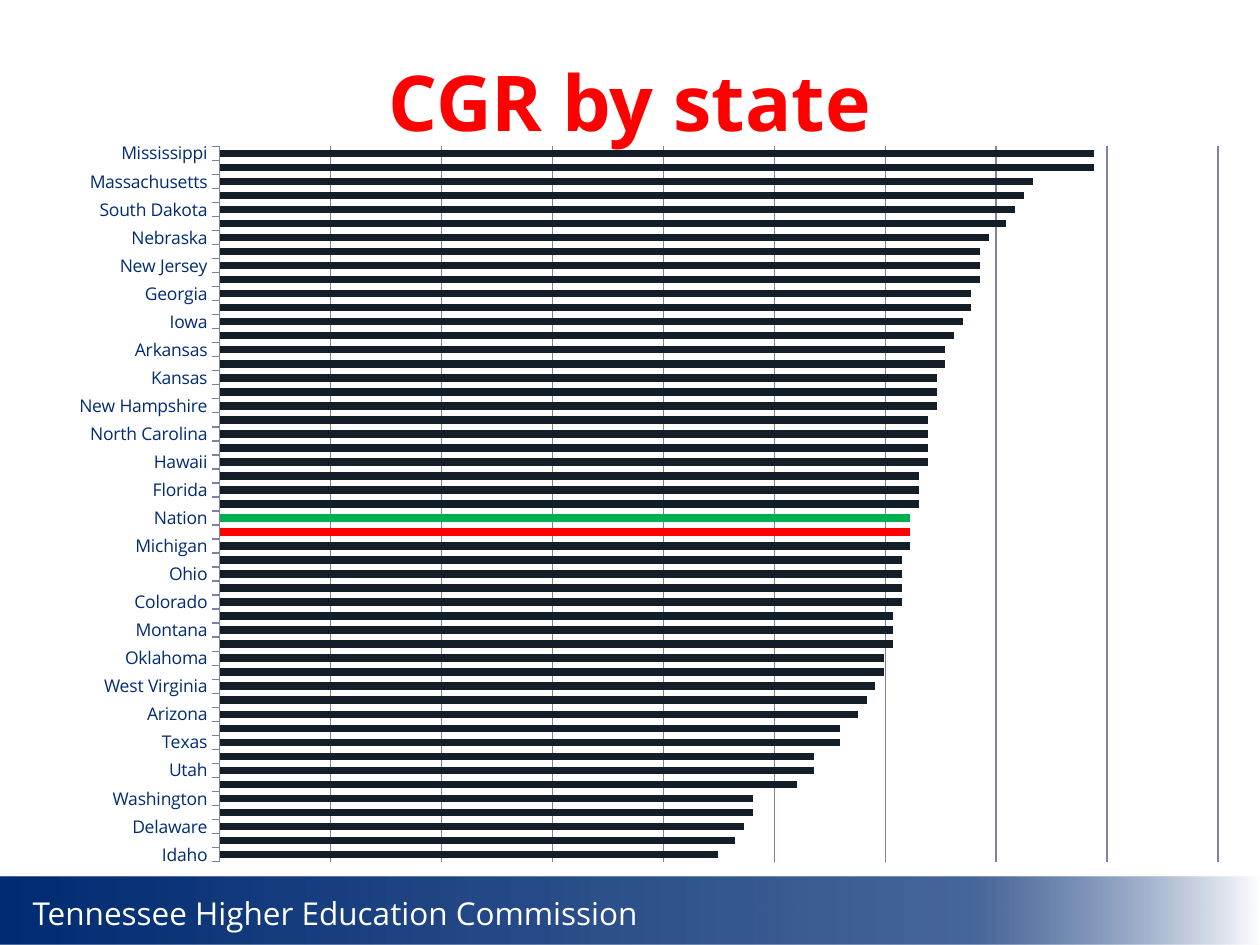
from lxml import etree
from pptx import Presentation
from pptx.chart.data import CategoryChartData
from pptx.dml.color import RGBColor
from pptx.enum.chart import XL_CHART_TYPE, XL_TICK_MARK
from pptx.enum.shapes import MSO_SHAPE
from pptx.enum.text import MSO_ANCHOR, MSO_AUTO_SIZE, PP_ALIGN
from pptx.oxml import parse_xml
from pptx.util import Inches, Pt

BARS = XL_CHART_TYPE.BAR_CLUSTERED
TICK_OUT, TICK_NONE = XL_TICK_MARK.OUTSIDE, XL_TICK_MARK.NONE
RECTANGLE = MSO_SHAPE.RECTANGLE
MIDDLE = MSO_ANCHOR.MIDDLE
FIT_SHAPE = MSO_AUTO_SIZE.SHAPE_TO_FIT_TEXT
LEFT, CENTER = PP_ALIGN.LEFT, PP_ALIGN.CENTER

NAVY = RGBColor(0x00, 0x2C, 0x73)
WHITE = RGBColor(0xFF, 0xFF, 0xFF)
RED = RGBColor(0xFF, 0x00, 0x00)
GREEN = RGBColor(0x00, 0xB0, 0x50)
INK = RGBColor(0x13, 0x1E, 0x29)
GRID = RGBColor(0x80, 0x80, 0xA0)
FONT = "Open Sans"

A_NS = "http://schemas.openxmlformats.org/drawingml/2006/main"
C_NS = "http://schemas.openxmlformats.org/drawingml/2006/chart"

WIDTH, HEIGHT = Inches(10), Inches(7.5)
GRID_STEPS = 9
AXIS_MAX = 114.2
PLOT_AREA = {"x": 0.156, "y": 0.04, "w": 0.827, "h": 0.946}
HIGHLIGHTS = {"Nation": GREEN, "Tennessee": RED}
RATES = [
    ("Mississippi", 100), ("Connecticut", 100), ("Massachusetts", 93),
    ("New Mexico", 92), ("South Dakota", 91), ("Minnesota", 90),
    ("Nebraska", 88), ("New York", 87), ("New Jersey", 87),
    ("South Carolina", 87), ("Georgia", 86), ("North Dakota", 86),
    ("Iowa", 85), ("Indiana", 84), ("Arkansas", 83), ("Rhode Island", 83),
    ("Kansas", 82), ("Louisiana", 82), ("New Hampshire", 82),
    ("Maryland", 81), ("North Carolina", 81), ("Virginia", 81),
    ("Hawaii", 81), ("Alabama", 80), ("Florida", 80), ("Kentucky", 80),
    ("Nation", 79), ("Tennessee", 79), ("Michigan", 79), ("California", 78),
    ("Ohio", 78), ("Missouri", 78), ("Colorado", 78), ("Pennsylvania", 77),
    ("Montana", 77), ("Wyoming", 77), ("Oklahoma", 76), ("Wisconsin", 76),
    ("West Virginia", 75), ("Illinois", 74), ("Arizona", 73), ("Maine", 71),
    ("Texas", 71), ("Vermont", 68), ("Utah", 68), ("Nevada", 66),
    ("Washington", 61), ("Oregon", 61), ("Delaware", 60), ("Alaska", 59),
    ("Idaho", 57),
]


def share(left, top, width, height):
    """Turn shares of the slide's size into lengths."""
    return (int(left * WIDTH), int(top * HEIGHT),
            int(width * WIDTH), int(height * HEIGHT))


def format_font(font, size, color, bold=False):
    font.name, font.size, font.bold = FONT, Pt(size), bold
    font.color.rgb = color


def write(frame, text, *, size, color, bold=False, align=LEFT):
    frame.text = text
    paragraph = frame.paragraphs[0]
    paragraph.alignment = align
    format_font(paragraph.runs[0].font, size, color, bold)


def add_title(slide, text):
    title = slide.shapes.title
    title.left, title.top, title.width, title.height = share(0.05, 0.023, 0.9, 0.167)
    title.text_frame.vertical_anchor = MIDDLE
    write(title.text_frame, text, size=44, color=RED, bold=True, align=CENTER)


def fade_to_white(shape):
    """Fill with navy that thins out and ends in white, left to right."""
    stops = ((0, NAVY, 100), (77, NAVY, 72), (100, WHITE, 100))
    gradient = "".join(
        f'<a:gs pos="{position * 1000}"><a:srgbClr val="{color}">'
        f'<a:alpha val="{opacity * 1000}"/></a:srgbClr></a:gs>'
        for position, color, opacity in stops)
    shape.fill.background()
    properties = shape.element.spPr
    empty_fill = properties.find(f"{{{A_NS}}}noFill")
    properties.replace(empty_fill, parse_xml(
        f'<a:gradFill xmlns:a="{A_NS}" rotWithShape="1"><a:gsLst>{gradient}'
        '</a:gsLst><a:lin ang="0" scaled="0"/></a:gradFill>'))


def add_footer(slide, text):
    band = slide.shapes.add_shape(RECTANGLE, *share(0, 0.928, 1, 0.072))
    band.shadow.inherit = False
    band.line.fill.background()
    fade_to_white(band)
    label = slide.shapes.add_textbox(*share(0.016, 0.94, 0.505, 0.053))
    label.text_frame.word_wrap = False
    label.text_frame.auto_size = FIT_SHAPE
    write(label.text_frame, text, size=18, color=WHITE)


def fix_plot_area(chart):
    plot_area = chart.element.find(f".//{{{C_NS}}}plotArea")
    for layout in plot_area.findall(f"{{{C_NS}}}layout"):
        plot_area.remove(layout)
    layout = etree.Element(f"{{{C_NS}}}layout")
    manual = etree.SubElement(layout, f"{{{C_NS}}}manualLayout")
    settings = {"layoutTarget": "inner", "xMode": "edge", "yMode": "edge", **PLOT_AREA}
    for tag, value in settings.items():
        etree.SubElement(manual, f"{{{C_NS}}}{tag}", val=str(value))
    plot_area.insert(0, layout)


def label_every_second(chart):
    last = chart.element.find(f".//{{{C_NS}}}catAx/{{{C_NS}}}noMultiLvlLbl")
    for tag, step in (("tickLblSkip", 2), ("tickMarkSkip", 1)):
        last.addprevious(etree.Element(f"{{{C_NS}}}{tag}", val=str(step)))


def style_axes(chart):
    states, rates = chart.category_axis, chart.value_axis
    states.reverse_order = True
    states.major_tick_mark, states.minor_tick_mark = TICK_OUT, TICK_NONE
    rates.minimum_scale, rates.maximum_scale = 0, AXIS_MAX
    rates.major_unit = AXIS_MAX / GRID_STEPS
    rates.has_major_gridlines = True
    rates.visible = False
    for line in (states.format.line, rates.major_gridlines.format.line):
        line.color.rgb = GRID
        line.width = Pt(0.75)
    label_every_second(chart)


def add_rate_chart(slide):
    states, rates = zip(*RATES)
    data = CategoryChartData()
    data.categories = states
    data.add_series("Series 1", rates)
    chart = slide.shapes.add_chart(BARS, *share(0.025, 0.123, 0.958, 0.8), data).chart
    chart.has_legend = chart.has_title = False
    format_font(chart.font, 10, NAVY)
    plot = chart.plots[0]
    plot.gap_width, plot.overlap, plot.vary_by_categories = 86, 100, False
    bars = plot.series[0]
    bars.format.fill.solid()
    bars.format.fill.fore_color.rgb = INK
    for state, color in HIGHLIGHTS.items():
        fill = bars.points[states.index(state)].format.fill
        fill.solid()
        fill.fore_color.rgb = color
    style_axes(chart)
    fix_plot_area(chart)


def main():
    deck = Presentation()
    deck.slide_width, deck.slide_height = WIDTH, HEIGHT
    slide = deck.slides.add_slide(deck.slide_layouts.get_by_name("Title Only"))
    add_footer(slide, "Tennessee Higher Education Commission")
    add_title(slide, "CGR by state")
    add_rate_chart(slide)
    deck.save("out.pptx")


if __name__ == "__main__":
    main()
